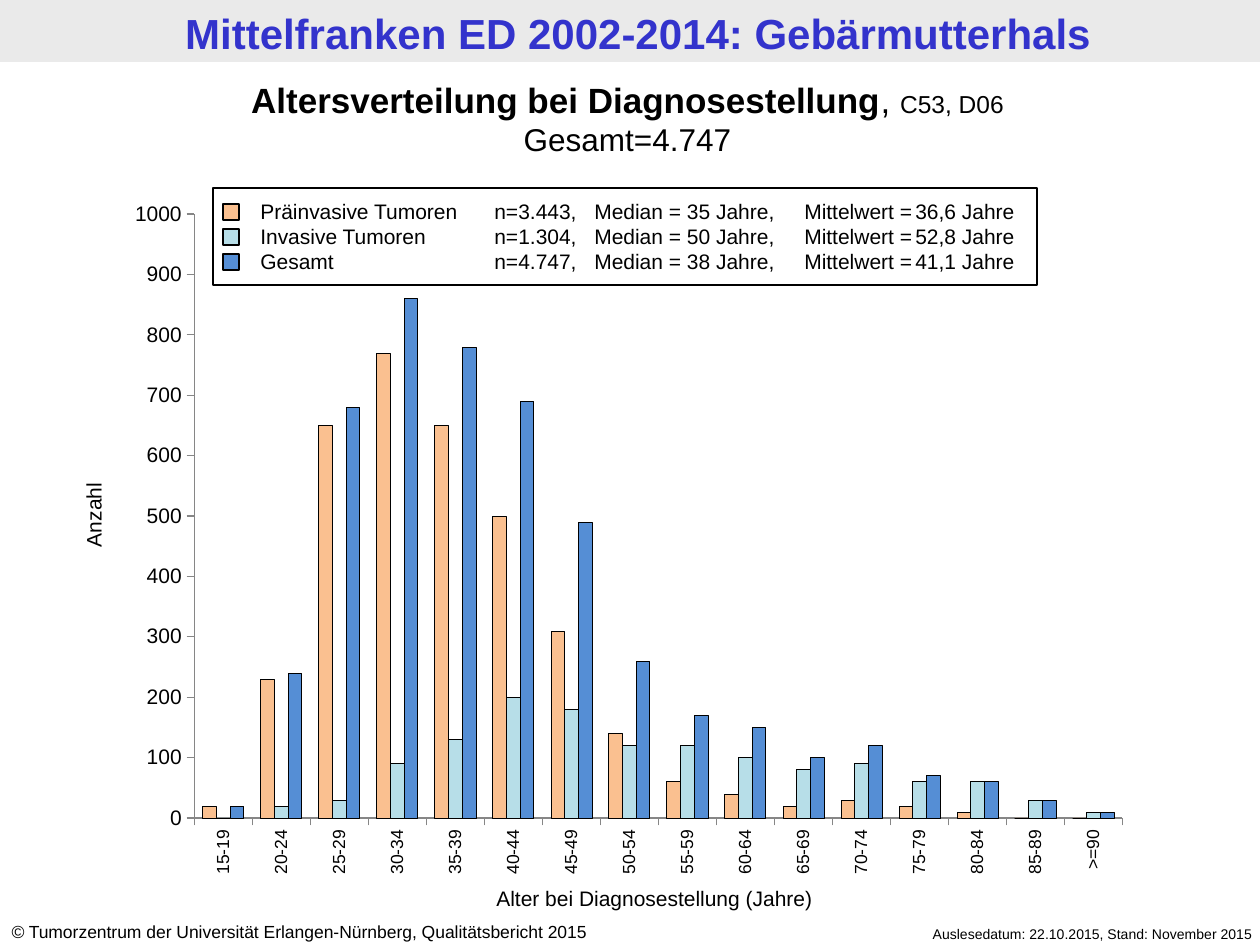
from lxml import etree
from pptx import Presentation
from pptx import util as u
from pptx.chart import data as chart_data
from pptx.dml.color import RGBColor
from pptx.enum import chart as ch, shapes, text
from pptx.oxml import parse_xml
from pptx.oxml.ns import nsdecls, qn

SCALE = 914400 / 126
THEME = {
    "font": "Arial", "chart_font": "Calibri",
    "black": RGBColor.from_string("000000"), "white": RGBColor.from_string("FFFFFF"),
    "banner": RGBColor.from_string("EAEAEA"), "title": RGBColor.from_string("3333CC"),
    "axis": RGBColor.from_string("868686"),
    "series": [RGBColor.from_string(c) for c in ("FAC090", "B7DEE8", "558ED5")],
    "title_size": 24, "heading_size": 20, "total_size": 18, "code_size": 14,
    "label_size": 12, "small_size": 10, "date_size": 8,
}
LEFT, CENTER, RIGHT = text.PP_ALIGN.LEFT, text.PP_ALIGN.CENTER, text.PP_ALIGN.RIGHT


def box(*lengths):
    return [u.Emu(round(length * SCALE)) for length in lengths]


def add_text(slide, place, paragraphs, align=LEFT, tabs=(), rotation=0):
    shape = slide.shapes.add_textbox(*box(*place))
    shape.rotation = rotation
    frame = shape.text_frame
    frame.word_wrap = True
    frame.auto_size = text.MSO_AUTO_SIZE.SHAPE_TO_FIT_TEXT
    for index, runs in enumerate(paragraphs):
        paragraph = frame.paragraphs[0] if index == 0 else frame.add_paragraph()
        paragraph.alignment = align
        if tabs:
            tab_list = etree.SubElement(paragraph._p.get_or_add_pPr(), qn("a:tabLst"))
            for position, side in tabs:
                etree.SubElement(tab_list, qn("a:tab"), pos=str(box(position)[0]), algn=side)
        for words, size, extra in runs:
            run = paragraph.add_run()
            run.text = words
            values = {"name": THEME["font"], "size": u.Pt(size), "bold": False, "italic": False}
            values.update(extra)
            color = values.pop("color", THEME["black"])
            for name, value in values.items():
                setattr(run.font, name, value)
            run.font.color.rgb = color
    return shape


presentation = Presentation()
presentation.slide_width, presentation.slide_height = box(1260, 945)
slide = presentation.slides.add_slide(presentation.slide_layouts[6])

banner = slide.shapes.add_shape(shapes.MSO_SHAPE.RECTANGLE, *box(0, 0, 1260, 62))
banner.shadow.inherit = False
banner.fill.solid()
banner.fill.fore_color.rgb = THEME["banner"]
banner.line.fill.background()

add_text(slide, (8, 1, 1260, 62), [[
    ("Mittelfranken ED 2002-2014: Gebärmutterhals", THEME["title_size"],
     {"bold": True, "color": THEME["title"]})]], CENTER)
add_text(slide, (838, 919, 427, 30), [[
    ("Auslesedatum: 22.10.2015, Stand: November 2015", THEME["date_size"], {})]], RIGHT)
add_text(slide, (-1, 915, 660, 34), [[
    ("©", THEME["small_size"], {"italic": True}),
    (" Tumorzentrum der Universität Erlangen-Nürnberg, Qualitätsbericht 2015",
     THEME["small_size"], {})]])
add_text(slide, (-5, 72, 1265, 93), [
    [("Altersverteilung bei Diagnosestellung", THEME["heading_size"], {"bold": True}),
     (", ", THEME["heading_size"], {}),
     ("C53, D06", THEME["code_size"], {})],
    [("Gesamt=4.747", THEME["total_size"], {})]], CENTER)

ages = chart_data.CategoryChartData()
ages.categories = [f"{age}-{age + 4}" for age in range(15, 90, 5)] + [">=90"]
counts = {
    "Präinvasive Tumoren":
        [20, 230, 650, 770, 650, 500, 310, 140, 60, 40, 20, 30, 20, 10, 0, 0],
    "Invasive Tumoren":
        [0, 20, 30, 90, 130, 200, 180, 120, 120, 100, 80, 90, 60, 60, 30, 10],
    "Gesamt":
        [20, 240, 680, 860, 780, 690, 490, 260, 170, 150, 100, 120, 70, 60, 30, 10],
}
for name, values in counts.items():
    ages.add_series(name, values)

chart_place = (115, 189, 1028, 699)
chart = slide.shapes.add_chart(
    ch.XL_CHART_TYPE.COLUMN_CLUSTERED, *box(*chart_place), ages).chart
chart.has_legend = False
chart.has_title = False
chart.font.name = THEME["chart_font"]
chart.font.size = u.Pt(THEME["total_size"])
chart.font.color.rgb = THEME["black"]

plot = chart.plots[0]
plot.gap_width = 124
plot.overlap = 0
plot.vary_by_categories = False
for series, color in zip(plot.series, THEME["series"]):
    series.format.fill.solid()
    series.format.fill.fore_color.rgb = color
    series.format.line.color.rgb = THEME["black"]
    series.format.line.width = u.Pt(0.25)

for axis, size in ((chart.category_axis, THEME["small_size"]),
                   (chart.value_axis, THEME["label_size"])):
    axis.has_major_gridlines = False
    axis.major_tick_mark = ch.XL_TICK_MARK.OUTSIDE
    axis.minor_tick_mark = ch.XL_TICK_MARK.NONE
    axis.format.line.color.rgb = THEME["axis"]
    axis.format.line.width = u.Pt(0.75)
    font = axis.tick_labels.font
    font.name, font.size = THEME["font"], u.Pt(size)
    font.color.rgb = THEME["black"]
for name, value in {"minimum_scale": 0, "maximum_scale": 1000, "major_unit": 100}.items():
    setattr(chart.value_axis, name, value)
label_body = chart.category_axis._element.find(qn("c:txPr")).find(qn("a:bodyPr"))
label_body.set("rot", "-5400000")
label_body.set("vert", "horz")

plot_place = (194, 214, 928, 604)
offsets = (chart_place[0], chart_place[1], 0, 0)
spans = chart_place[2:] * 2
fractions = [round((a - b) / c, 3) for a, b, c in zip(plot_place, offsets, spans)]
area = chart._chartSpace.find(qn("c:chart")).find(qn("c:plotArea"))
for old_layout in area.findall(qn("c:layout")):
    area.remove(old_layout)
sizes = "".join(f'<c:{tag} val="{value}"/>' for tag, value in zip("xywh", fractions))
area.insert(0, parse_xml(
    f'<c:layout {nsdecls("c")}><c:manualLayout><c:layoutTarget val="inner"/>'
    f'<c:xMode val="edge"/><c:yMode val="edge"/>{sizes}</c:manualLayout></c:layout>'))
area.append(parse_xml(
    f'<c:spPr {nsdecls("c", "a")}><a:solidFill><a:srgbClr val="{THEME["white"]}"/>'
    '</a:solidFill><a:ln><a:noFill/></a:ln></c:spPr>'))

add_text(slide, (461, 879, 387, 38), [[
    ("Alter bei Diagnosestellung (Jahre)", THEME["label_size"], {})]], CENTER)
add_text(slide, (-71, 496, 329, 38), [[
    ("Anzahl", THEME["label_size"], {})]], CENTER, rotation=270)

legend_lines = [
    "Präinvasive Tumoren\tn=\t3.443,\tMedian = 35 Jahre,\tMittelwert =\t36,6 Jahre",
    "Invasive Tumoren\t\tn=\t1.304,\tMedian = 50 Jahre,\tMittelwert =\t52,8 Jahre",
    "Gesamt\t\tn=\t4.747,\tMedian = 38 Jahre,\tMittelwert =\t41,1 Jahre",
]
legend_tabs = [(185, "l"), (234, "l"), (310, "r"), (334, "l"), (544, "l"), (655, "l")]
add_text(slide, (248, 192, 809, 89),
         [[(line, THEME["label_size"], {})] for line in legend_lines], tabs=legend_tabs)

legend_boxes = [((213, 188, 824, 97), None)]
legend_boxes += [((223, 204 + 25 * row, 16, 16), color)
                 for row, color in enumerate(THEME["series"])]
for place, color in legend_boxes:
    shape = slide.shapes.add_shape(shapes.MSO_SHAPE.RECTANGLE, *box(*place))
    shape.shadow.inherit = False
    if color is None:
        shape.fill.background()
    else:
        shape.fill.solid()
        shape.fill.fore_color.rgb = color
    shape.line.color.rgb = THEME["black"]
    shape.line.width = u.Pt(0.75)

presentation.save("out.pptx")
